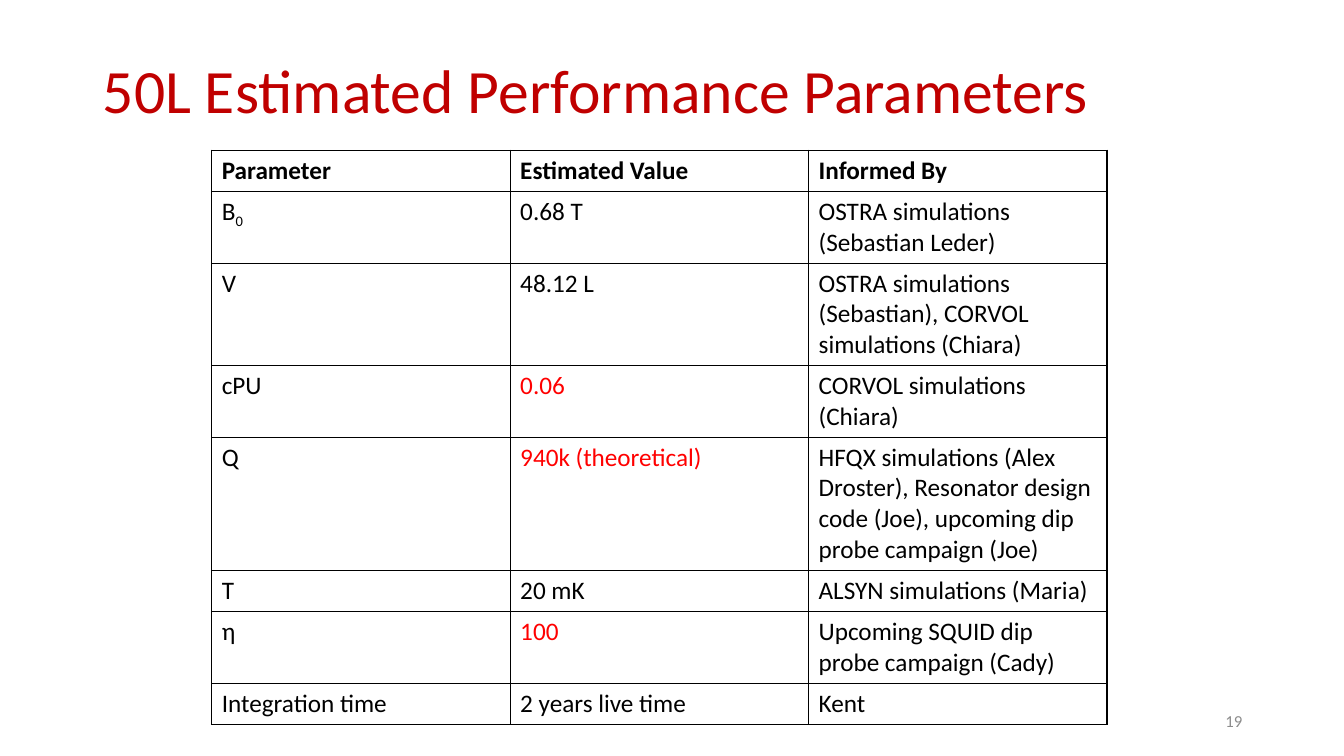
from lxml.etree import SubElement
from pptx import Presentation
from pptx.dml.color import RGBColor
from pptx.enum.text import MSO_ANCHOR, PP_ALIGN
from pptx.oxml.ns import qn
from pptx.util import Inches, Pt

HUES = {"title": "C00000", "text": "000000", "alert": "FF0000", "page": "8C8C8C"}

ROWS = [
    ("Parameter", "Estimated Value", "Informed By"),
    ("B_0", "0.68 T", "OSTRA simulations (Sebastian Leder)"),
    ("V", "48.12 L", "OSTRA simulations (Sebastian), CORVOL simulations (Chiara)"),
    ("cPU", "0.06", "CORVOL simulations (Chiara)"),
    ("Q", "940k (theoretical)", "HFQX simulations (Alex Droster), Resonator design "
     "code (Joe), upcoming dip probe campaign (Joe)"),
    ("T", "20 mK", "ALSYN simulations (Maria)"),
    ("η", "100", "Upcoming SQUID dip probe campaign (Cady)"),
    ("Integration time", "2 years live time", "Kent"),
]
ALERTS = {"cPU", "Q", "η"}


class Deck:
    """Holds the style and the current slide."""

    def __init__(self, font):
        self.font = font
        self.show = Presentation()
        self.show.slide_width = Inches(13.33)
        self.show.slide_height = Inches(7.5)
        self.slide = self.show.slides.add_slide(self.show.slide_layouts[5])

    def text(self, frame, text, hue, size, bold=False, **form):
        para = frame.paragraphs[0]
        for name, value in form.items():
            setattr(para, name, value)
        for part, words in enumerate(text.split("_")):
            run = para.add_run()
            run.text = words
            style = {"name": self.font, "size": Pt(size), "bold": bold}
            for name, value in style.items():
                setattr(run.font, name, value)
            run.font.color.rgb = RGBColor.from_string(HUES[hue])
            if part:
                run._r.get_or_add_rPr().set("baseline", "-25000")

    def place(self, shape, box):
        for name, value in zip(("left", "top", "width", "height"), box):
            setattr(shape, name, Inches(value))
        shape.text_frame.word_wrap = True
        shape.text_frame.vertical_anchor = MSO_ANCHOR.MIDDLE

    def title(self, text, box):
        shape = self.slide.shapes.title
        self.place(shape, box)
        self.text(shape.text_frame, text, "title", 44,
                  alignment=PP_ALIGN.LEFT, line_spacing=0.9)

    def label(self, text, box):
        shape = self.slide.shapes.add_textbox(0, 0, 0, 0)
        self.place(shape, box)
        self.text(shape.text_frame, text, "page", 12, alignment=PP_ALIGN.RIGHT)

    def border(self, cell):
        props = cell._tc.get_or_add_tcPr()
        for side in ("a:lnL", "a:lnR", "a:lnT", "a:lnB"):
            line = SubElement(props, qn(side), w=str(Pt(1)))
            fill = SubElement(line, qn("a:solidFill"))
            SubElement(fill, qn("a:srgbClr"), val=HUES["text"])

    def table(self, rows, left, top, width, step):
        count = len(rows[0])
        grid = self.slide.shapes.add_table(
            len(rows), count, Inches(left), Inches(top),
            Inches(width * count), Inches(step * len(rows))).table
        grid.first_row = grid.horz_banding = False
        for i, row in enumerate(rows):
            for j, text in enumerate(row):
                cell = grid.cell(i, j)
                self.border(cell)
                cell.fill.background()
                hue = "alert" if j == 1 and row[0] in ALERTS else "text"
                self.text(cell.text_frame, text, hue, 18, bold=i == 0)


def main():
    deck = Deck("Calibri")
    deck.title("50L Estimated Performance Parameters", (0.92, 0.2, 11.5, 1.45))
    deck.table(ROWS, 2.1, 1.49, 2.96, 0.41)
    deck.label("19", (9.42, 6.95, 3, 0.4))
    deck.show.save("out.pptx")


if __name__ == "__main__":
    main()
